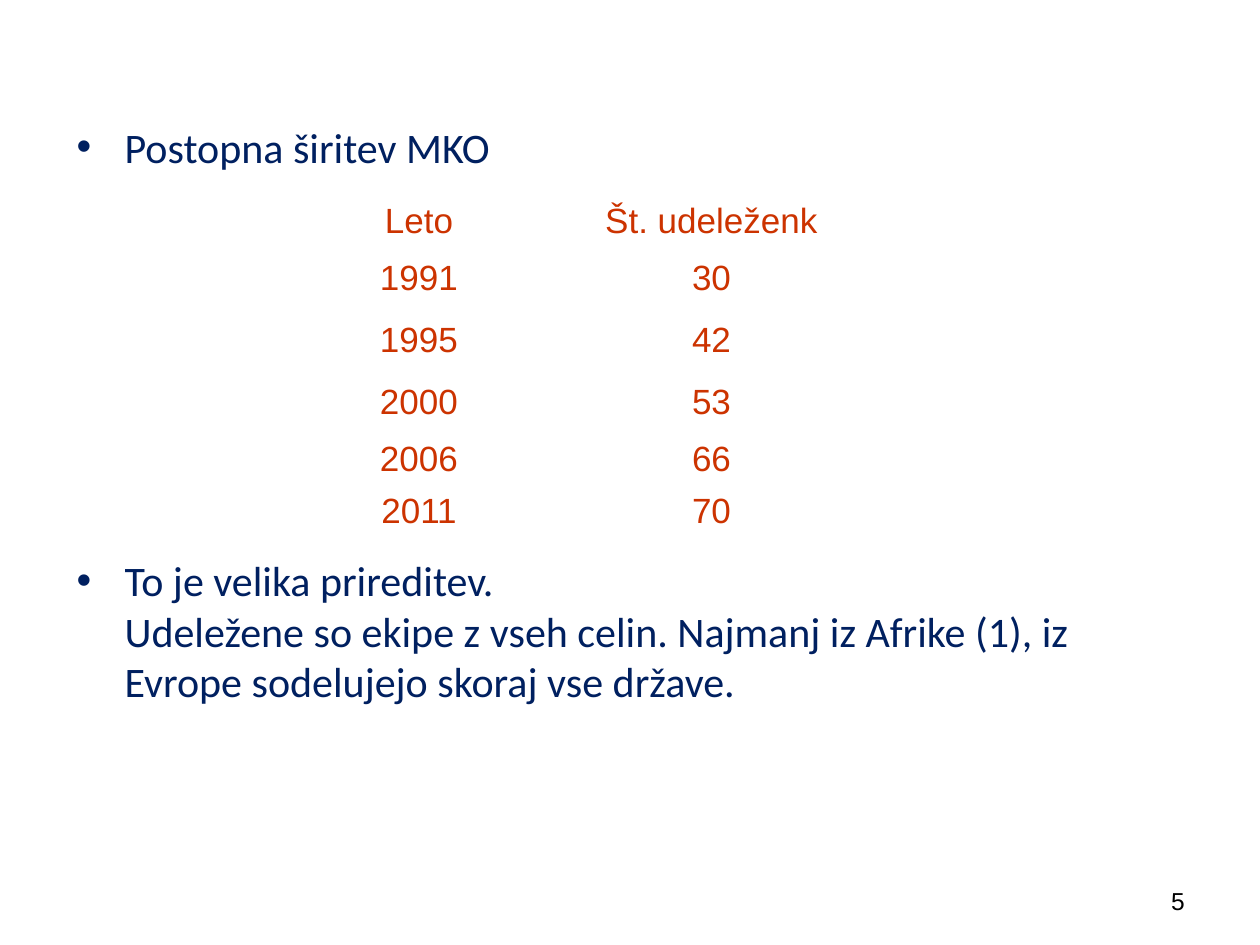
"""Builds a slide on the growth of a competition: two bullets and a table of years."""
from pptx import Presentation
from pptx.dml.color import RGBColor
from pptx.enum.text import MSO_ANCHOR, MSO_AUTO_SIZE, PP_ALIGN
from pptx.util import Pt

PX = 914400 // 126
NAVY = RGBColor(0x00, 0x20, 0x60)
RUST = RGBColor(0xCC, 0x33, 0x00)
BLACK = RGBColor(0x00, 0x00, 0x00)

BULLETS = [
    ("Postopna širitev MKO", 0),
    ("To je velika prireditev.\vUdeležene so ekipe z vseh celin. "
     "Najmanj iz Afrike (1), iz Evrope sodelujejo skoraj vse države.", 219),
]
PARTICIPANTS = [
    ("Leto", "Št. udeleženk"),
    ("1991", "30"),
    ("1995", "42"),
    ("2000", "53"),
    ("2006", "66"),
    ("2011", "70"),
]
PAGE_NUMBER = "5"

BODY_BOX = (64, 115, 1134, 719)
NUMBER_BOX = (903, 876, 294, 50)
TABLE_ORIGIN = (263, 195)
COLUMN_WIDTHS = (312, 273)
ROW_HEIGHTS = (52, 62, 62, 62, 52, 52)
CELL_MARGIN = 5
BULLET_INDENT = 48


def emu(*lengths):
    return [length * PX for length in lengths]


def write(paragraph, text, *, size, font, color, align=PP_ALIGN.LEFT, before=0):
    paragraph.text = text
    paragraph.alignment = align
    paragraph.space_before = Pt(before)
    paragraph.space_after = Pt(0)
    paragraph.font.size = Pt(size)
    paragraph.font.name = font
    paragraph.font.color.rgb = color


def add_bullets(slide):
    body = slide.placeholders[1]
    body.left, body.top, body.width, body.height = emu(*BODY_BOX)
    frame = body.text_frame
    frame.auto_size = MSO_AUTO_SIZE.NONE
    for index, (text, before) in enumerate(BULLETS):
        paragraph = frame.add_paragraph() if index else frame.paragraphs[0]
        properties = paragraph._p.get_or_add_pPr()
        properties.set("marL", str(BULLET_INDENT * PX))
        properties.set("indent", str(-BULLET_INDENT * PX))
        write(paragraph, text, size=24, font="Calibri", color=NAVY, before=before)


def add_participants(slide):
    box = emu(*TABLE_ORIGIN, sum(COLUMN_WIDTHS), sum(ROW_HEIGHTS))
    table = slide.shapes.add_table(len(PARTICIPANTS), len(COLUMN_WIDTHS), *box).table
    table.first_row = table.horz_banding = False
    for column, width in zip(table.columns, COLUMN_WIDTHS):
        column.width = width * PX
    for row, height, texts in zip(table.rows, ROW_HEIGHTS, PARTICIPANTS):
        row.height = height * PX
        for cell, text in zip(row.cells, texts):
            cell.fill.background()
            cell.vertical_anchor = MSO_ANCHOR.MIDDLE
            cell.margin_left = cell.margin_right = CELL_MARGIN * PX
            cell.margin_top = cell.margin_bottom = CELL_MARGIN * PX
            write(cell.text_frame.paragraphs[0], text, size=20, font="Arial",
                  color=RUST, align=PP_ALIGN.CENTER)


def add_page_number(slide):
    frame = slide.shapes.add_textbox(*emu(*NUMBER_BOX)).text_frame
    frame.word_wrap = True
    frame.vertical_anchor = MSO_ANCHOR.MIDDLE
    write(frame.paragraphs[0], PAGE_NUMBER, size=14, font="Arial",
          color=BLACK, align=PP_ALIGN.RIGHT)


def main():
    presentation = Presentation()
    presentation.slide_width, presentation.slide_height = emu(1260, 945)
    slide = presentation.slides.add_slide(presentation.slide_layouts[1])
    title = slide.shapes.title._element
    title.getparent().remove(title)
    add_page_number(slide)
    add_bullets(slide)
    add_participants(slide)
    presentation.save("out.pptx")


if __name__ == "__main__":
    main()
